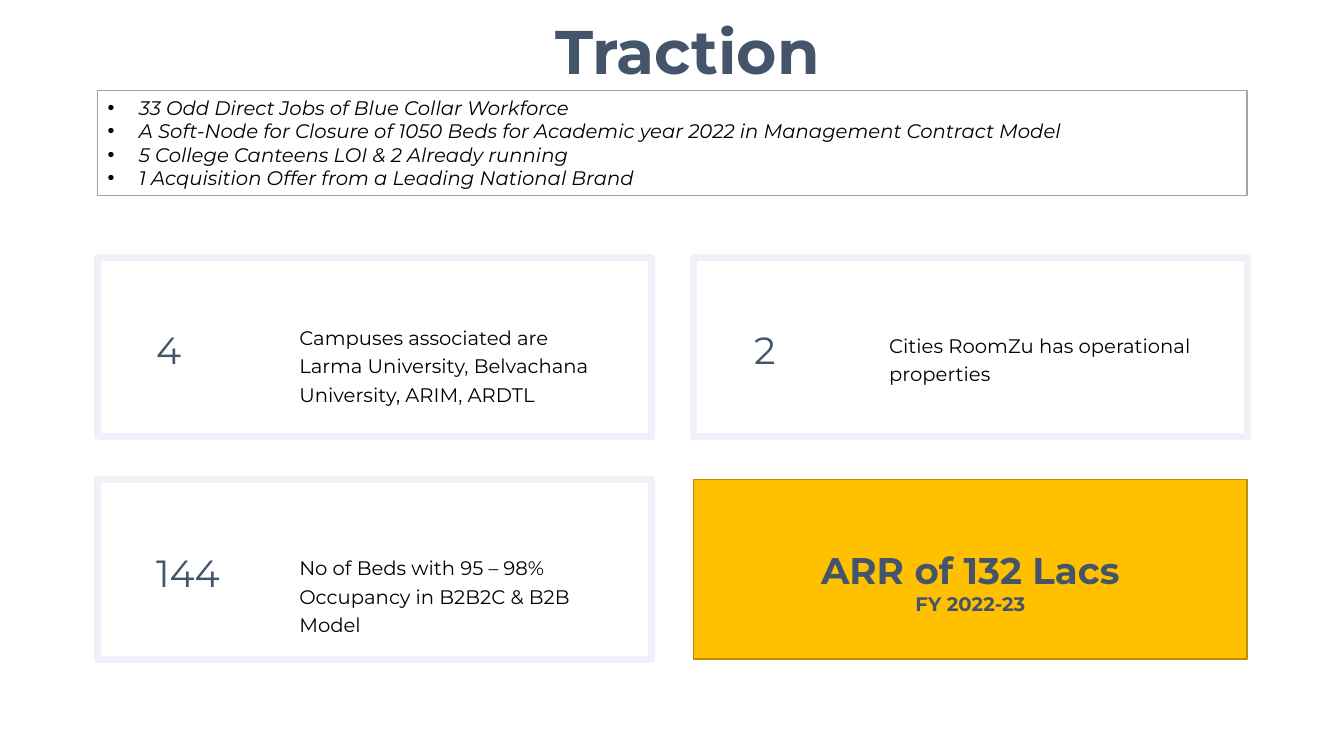
from lxml.etree import SubElement
from pptx import Presentation
from pptx.dml.color import RGBColor
from pptx.enum.shapes import MSO_SHAPE
from pptx.enum.text import MSO_ANCHOR, PP_ALIGN
from pptx.oxml.ns import qn
from pptx.util import Inches, Pt

COLORS = {
    "slate": "44546A",
    "black": "000000",
    "white": "FFFFFF",
    "frame": "EFF1F8",
    "gray": "A5A5A5",
    "gold": "FFC000",
    "dark gold": "BD8E00",
}
CARD_WIDTH, CARD_HEIGHT = 5.49, 1.78
COLUMNS = (0.97, 6.88)
ROWS = (2.55, 4.76)
HIGHLIGHTS = [
    "33 Odd Direct Jobs of Blue Collar Workforce",
    "A Soft-Node for Closure of 1050 Beds for Academic year 2022 in Management Contract Model",
    "5 College Canteens LOI & 2 Already running",
    "1 Acquisition Offer from a Leading National Brand",
]
METRICS = [
    (0, 0, "4", "Campuses associated are\nLarma University, Belvachana University, ARIM, ARDTL", 0.48, 1.9, 0.58, 0.94),
    (1, 0, "2", "Cities RoomZu has operational properties", 0.5, 1.84, 0.66, 0.66),
    (0, 1, "144", "No of Beds with 95 – 98% Occupancy in B2B2C & B2B Model", 0.48, 1.9, 0.66, 0.94),
]


def write_text(shape, paragraphs, size=14, color="black", bold=False, italic=False,
               align=PP_ALIGN.LEFT, anchor=MSO_ANCHOR.TOP, line_spacing=None, bullet=None):
    """Fill a shape with formatted paragraphs, turning newlines into line breaks."""
    frame = shape.text_frame
    frame.word_wrap = True
    frame.vertical_anchor = anchor
    frame.margin_left = frame.margin_right = Inches(0.1)
    frame.margin_top = frame.margin_bottom = Inches(0.05)
    for index, text in enumerate(paragraphs):
        paragraph = frame.add_paragraph() if index else frame.paragraphs[0]
        paragraph.alignment = align
        if line_spacing:
            paragraph.line_spacing = Pt(line_spacing)
        for number, line in enumerate(text.split("\n")):
            if number:
                paragraph.add_line_break()
            run = paragraph.add_run()
            run.text = line
            run.font.name = "Montserrat"
            run.font.size = Pt(size)
            run.font.bold = bold
            run.font.italic = italic
            run.font.color.rgb = RGBColor.from_string(COLORS[color])
        if bullet:
            properties = paragraph._p.get_or_add_pPr()
            properties.set("marL", str(Inches(0.31)))
            properties.set("indent", str(-Inches(0.31)))
            SubElement(properties, qn("a:buFont")).set("typeface", "Arial")
            SubElement(properties, qn("a:buChar")).set("char", bullet)


def add_text(slide, left, top, width, height, text, **text_format):
    """Add a text box holding one paragraph."""
    box = slide.shapes.add_textbox(Inches(left), Inches(top), Inches(width), Inches(height))
    write_text(box, [text], **text_format)
    return box


def add_panel(slide, left, top, width, height, line, line_width, fill=None):
    """Add an outlined rectangle with an optional fill."""
    panel = slide.shapes.add_shape(
        MSO_SHAPE.RECTANGLE, Inches(left), Inches(top), Inches(width), Inches(height))
    panel.shadow.inherit = False
    panel.line.color.rgb = RGBColor.from_string(COLORS[line])
    panel.line.width = Pt(line_width)
    if fill:
        panel.fill.solid()
        panel.fill.fore_color.rgb = RGBColor.from_string(COLORS[fill])
    else:
        panel.fill.background()
    return panel


def add_title(slide, left, top, width, height):
    """Place and format the title placeholder."""
    title = slide.shapes.title
    title.left, title.top = Inches(left), Inches(top)
    title.width, title.height = Inches(width), Inches(height)
    write_text(title, ["Traction"], size=44, color="slate", bold=True,
               align=PP_ALIGN.CENTER, line_spacing=None)
    title.text_frame.paragraphs[0].line_spacing = 1.0


def add_highlights(slide, left, top, width, height):
    """Add the bulleted list of highlights in its frame."""
    panel = add_panel(slide, left, top, width, height, "gray", 1, "white")
    write_text(panel, HIGHLIGHTS, italic=True, bullet="•")


def add_metric_card(slide, left, top, number, description, number_left,
                    text_left, text_top, text_height):
    """Add a framed card with a large number and its description."""
    add_panel(slide, left, top, CARD_WIDTH, CARD_HEIGHT, "frame", 5)
    add_text(slide, left + number_left, top + 0.64, 0.98, 0.56, number, size=27, color="slate")
    add_text(slide, left + text_left, top + text_top, 3.2, text_height, description,
             line_spacing=20.4)


def add_revenue_card(slide, left, top):
    """Add the filled card with the revenue figure."""
    add_panel(slide, left, top, CARD_WIDTH, CARD_HEIGHT, "dark gold", 1, "gold")
    box = add_text(slide, left + 0.57, top + 0.62, 4.35, 0.78, "ARR of 132 Lacs\nFY 2022-23",
                   size=26.5, color="slate", bold=True, align=PP_ALIGN.CENTER)
    box.text_frame.paragraphs[0].runs[-1].font.size = Pt(14)


def main():
    """Build the traction slide and save it."""
    presentation = Presentation()
    presentation.slide_width, presentation.slide_height = Inches(13.33), Inches(7.5)
    slide = presentation.slides.add_slide(presentation.slide_layouts[5])
    add_title(slide, 4.76, 0.08, 4.12, 0.84)
    for column, row, *content in METRICS:
        add_metric_card(slide, COLUMNS[column], ROWS[row], *content)
    add_revenue_card(slide, COLUMNS[1], ROWS[1])
    add_highlights(slide, COLUMNS[0], 0.9, 11.4, 1.04)
    presentation.save("out.pptx")


if __name__ == "__main__":
    main()
